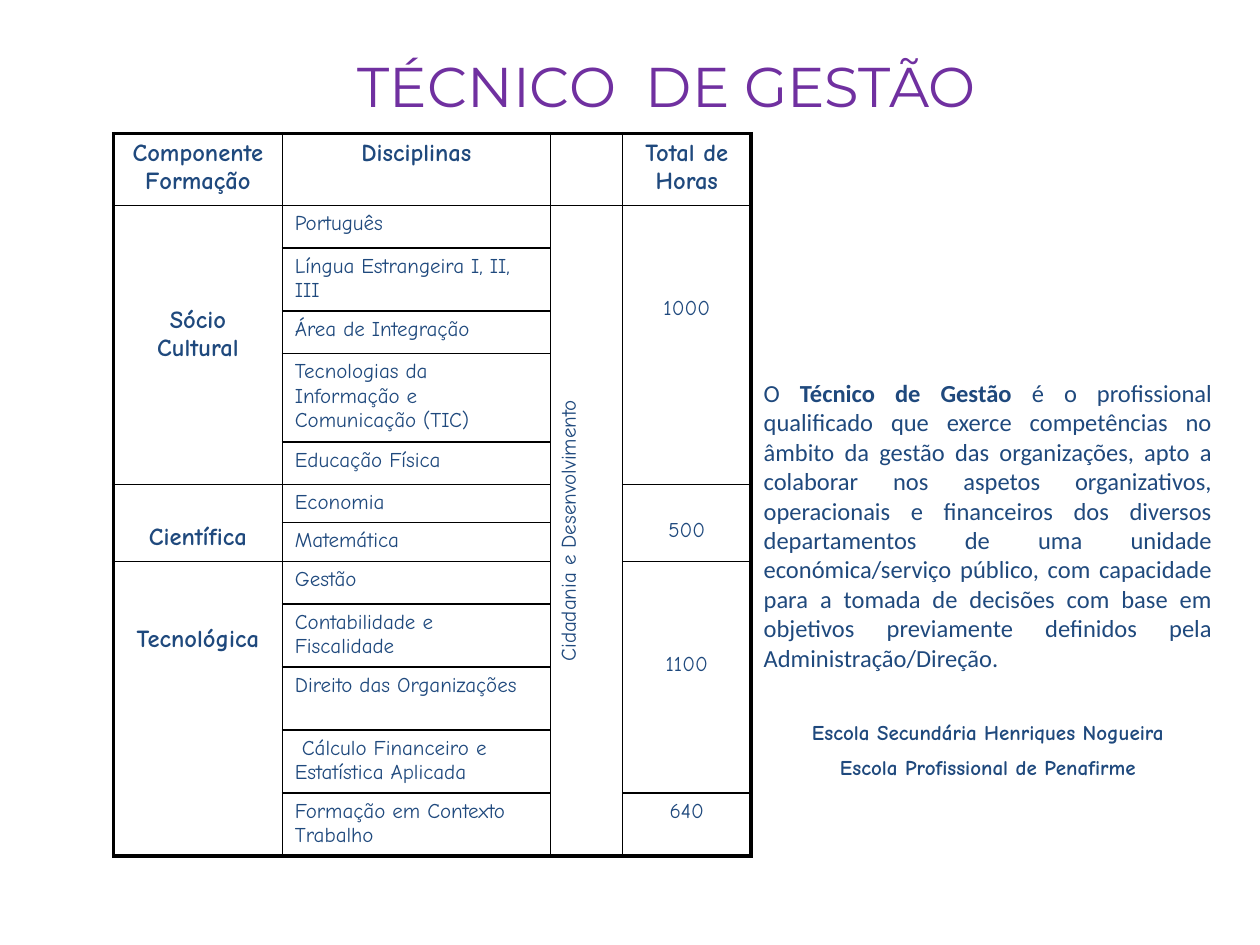
from lxml.etree import SubElement
from pptx import Presentation
from pptx.dml.color import RGBColor
from pptx.enum.text import MSO_ANCHOR, MSO_AUTO_SIZE, PP_ALIGN
from pptx.oxml.ns import qn
from pptx.util import Cm, Pt

PURPLE = RGBColor(0x70, 0x30, 0xA0)
NAVY = RGBColor(0x1F, 0x49, 0x7D)
BLACK = RGBColor(0, 0, 0)
NO_STYLE = "{2D5ABB26-0587-4C30-8999-92F81FD0307C}"


def write(para, text, font="Comic Neue", size=12, bold=False, color=NAVY,
          align=PP_ALIGN.CENTER, before=0):
    para.alignment = align
    para.space_before = Pt(before)
    span = para.add_run()
    span.text = text
    span.font.name = font
    span.font.size = Pt(size)
    span.font.bold = bold
    span.font.color.rgb = color


def add_border(cell, side, width):
    line = SubElement(cell._tc.get_or_add_tcPr(), qn(f"a:ln{side}"), w=str(Pt(width)))
    fill = SubElement(line, qn("a:solidFill"))
    SubElement(fill, qn("a:srgbClr"), val=str(BLACK))


deck = Presentation()
deck.slide_width, deck.slide_height = Cm(25.4), Cm(19.05)
page = deck.slides.add_slide(deck.slide_layouts[1])
title, body = page.placeholders

# Title
title.left, title.top, title.width, title.height = Cm(2.18), Cm(0.91), Cm(22.53), Cm(1.4)
title.text_frame.word_wrap = False
title.text_frame.auto_size = MSO_AUTO_SIZE.NONE
title.text_frame.vertical_anchor = MSO_ANCHOR.TOP
write(title.text_frame.paragraphs[0], "TÉCNICO  DE GESTÃO", font="Montserrat",
      size=32, color=PURPLE)

# Course plan table
column_widths = [3.4, 5.41, 1.45, 2.59]
row_heights = [1.45, 0.86, 1.27, 0.86, 1.78, 0.86, 0.76, 0.79, 0.86, 1.27, 1.27, 1.27, 1.27]
last_row, last_column = len(row_heights) - 1, len(column_widths) - 1
frame = page.shapes.add_table(len(row_heights), len(column_widths), Cm(2.29), Cm(2.69),
                              Cm(sum(column_widths)), Cm(sum(row_heights)))
table = frame.table
table.first_row = table.horz_banding = False
table._tbl.tblPr.find(qn("a:tableStyleId")).text = NO_STYLE
for column, width in zip(table.columns, column_widths):
    column.width = Cm(width)
for row, height in zip(table.rows, row_heights):
    row.height = Cm(height)

# Header row
for index, heading in enumerate(["Componente Formação", "Disciplinas", "", "Total de Horas"]):
    if heading:
        write(table.cell(0, index).text_frame.paragraphs[0], heading, size=14, bold=True)

# Subjects
subjects = [
    "Português", "Língua Estrangeira I, II, III", "Área de Integração",
    "Tecnologias da Informação e Comunicação (TIC)", "Educação Física",
    "Economia", "Matemática", "Gestão", "Contabilidade e Fiscalidade",
    "Direito das Organizações", " Cálculo Financeiro e Estatística Aplicada",
    "Formação em Contexto Trabalho",
]
for index, subject in enumerate(subjects, start=1):
    write(table.cell(index, 1).text_frame.paragraphs[0], subject, align=PP_ALIGN.LEFT)

# Merged cells: first row, last row, column, text, size, bold, top margin in cm
groups = [
    (1, 5, 0, "Sócio Cultural", 14, True, 2.04),
    (6, 7, 0, "Científica", 14, True, 0.79),
    (8, 12, 0, "Tecnológica", 14, True, 1.29),
    (1, 12, 2, "Cidadania e Desenvolvimento", 12, False, 0.13),
    (1, 5, 3, "1000", 12, False, 1.83),
    (6, 7, 3, "500", 12, False, 0.69),
    (8, 11, 3, "1100", 12, False, 1.83),
    (12, 12, 3, "640", 12, False, 0.13),
]
for first, last, column, text, size, bold, margin in groups:
    cell = table.cell(first, column)
    if last > first:
        cell.merge(table.cell(last, column))
    cell.margin_top = Cm(margin)
    write(cell.text_frame.paragraphs[0], text, size=size, bold=bold)
table.cell(1, 2)._tc.get_or_add_tcPr().set("vert", "vert270")

# Borders: thick around the table, thin inside
for row in range(last_row + 1):
    for column in range(last_column + 1):
        cell = table.cell(row, column)
        if cell.is_spanned:
            cell.text_frame.paragraphs[0].font.size = Pt(12)
            continue
        bottom = row + (cell.span_height if cell.is_merge_origin else 1) - 1
        outer = {"L": column == 0, "R": column == last_column,
                 "T": row == 0, "B": bottom == last_row}
        for side, is_outer in outer.items():
            add_border(cell, side, 2.25 if is_outer else 1)
        cell.fill.background()

# Profile and schools
body.left, body.top, body.width, body.height = Cm(15.14), Cm(7.49), Cm(9.55), Cm(9.32)
box = body.text_frame
box.auto_size = MSO_AUTO_SIZE.NONE
box.vertical_anchor = MSO_ANCHOR.TOP
profile = box.paragraphs[0]
for text, bold in [
    ("O ", False),
    ("Técnico de Gestão ", True),
    ("é o profissional qualificado que exerce competências no âmbito da gestão das "
     "organizações, apto a colaborar nos aspetos organizativos, operacionais e "
     "financeiros dos diversos departamentos de uma unidade económica/serviço público, "
     "com capacidade para a tomada de decisões com base em objetivos previamente "
     "definidos pela Administração/Direção.", False),
]:
    write(profile, text, font="Calibri", size=14, bold=bold, align=PP_ALIGN.JUSTIFY, before=7)
for school, before in [("Escola Secundária Henriques Nogueira", 27),
                       ("Escola Profissional de Penafirme", 6)]:
    write(box.add_paragraph(), school, bold=True, before=before)
for para in box.paragraphs:
    properties = para._p.get_or_add_pPr()
    properties.set("marL", "0")
    properties.set("indent", "0")
    SubElement(properties, qn("a:buNone"))

deck.save("out.pptx")
